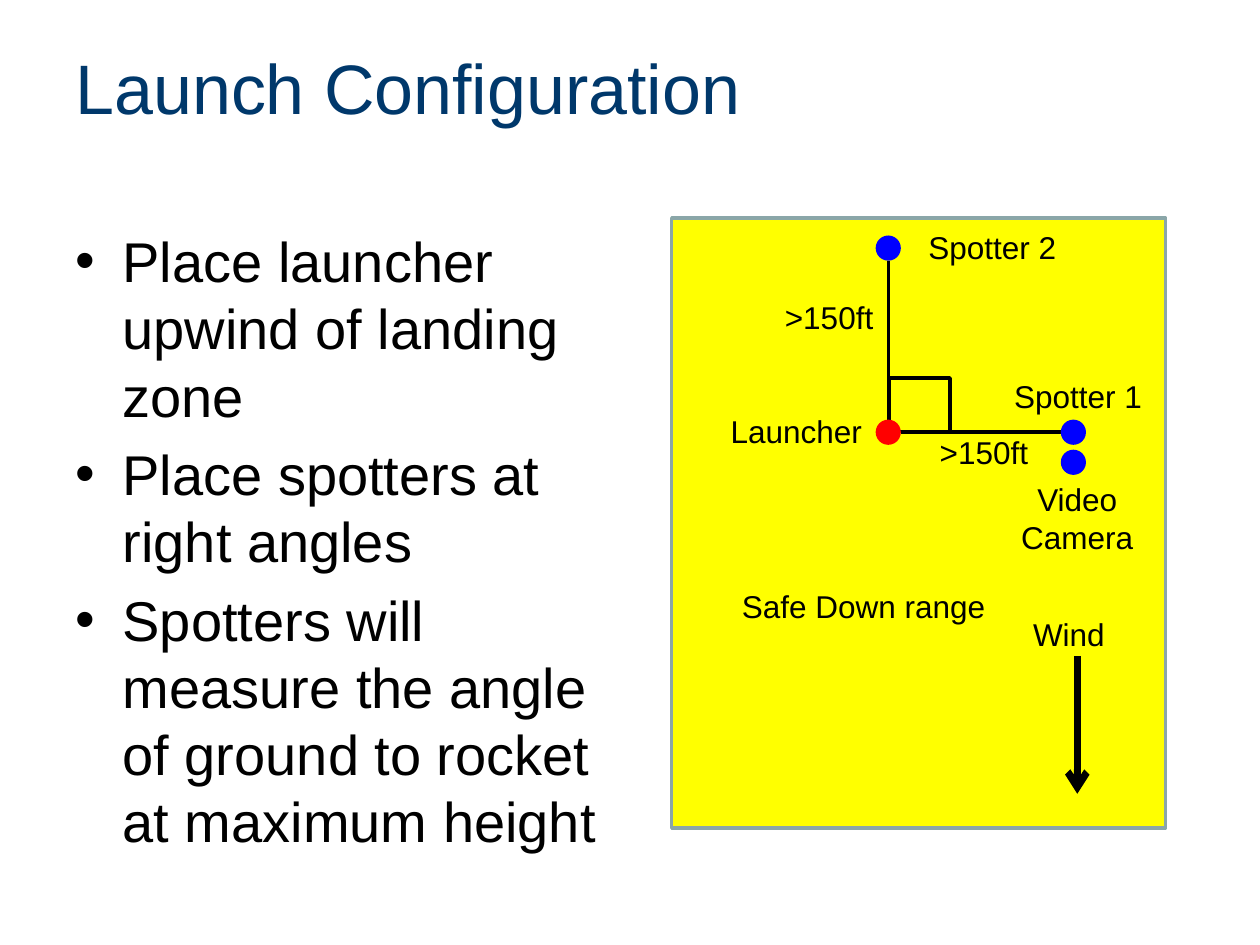
import pptx
import pptx.util
import pptx.dml.color
import pptx.enum.shapes
import pptx.enum.text
import pptx.oxml.ns
import lxml.etree

Pt = pptx.util.Pt
Color = pptx.dml.color.RGBColor.from_string
Shape = pptx.enum.shapes.MSO_SHAPE
Align = pptx.enum.text.PP_ALIGN
Anchor = pptx.enum.text.MSO_ANCHOR
qname = pptx.oxml.ns.qn

theme = {
    "font": "Arial",
    "title": 40, "body": 32, "label": 18,
    "navy": "00386B", "black": "000000", "field": "FFFF00",
    "border": "8AA6A8", "spotter": "0000FF", "launcher": "FF0000",
}

deck = pptx.Presentation()
deck.slide_width, deck.slide_height = Pt(720), Pt(540)
page = deck.slides.add_slide(deck.slide_layouts[6])


def add_text(text, left, top, width, height, size=theme["label"], color=theme["black"],
             wrap=False, anchor=Anchor.TOP, align=Align.LEFT, bullet=False):
    box = page.shapes.add_textbox(Pt(left), Pt(top), Pt(width), Pt(height))
    frame = box.text_frame
    frame.word_wrap = wrap
    frame.vertical_anchor = anchor
    frame.text = text
    for para in frame.paragraphs:
        para.alignment = align
        para.font.size = Pt(size)
        for span in para.runs:
            span.font.name = theme["font"]
            span.font.size = Pt(size)
            span.font.color.rgb = Color(color)
        if bullet:
            para.space_before = Pt(size * 0.2)
            properties = para._p.get_or_add_pPr()
            properties.set("marL", str(Pt(27)))
            properties.set("indent", str(-Pt(27)))
            lxml.etree.SubElement(properties, qname("a:buFont")).set("typeface", theme["font"])
            lxml.etree.SubElement(properties, qname("a:buChar")).set("char", "•")


def add_figure(kind, left, top, width, height, fill=None, line=None):
    figure = page.shapes.add_shape(kind, Pt(left), Pt(top), Pt(width), Pt(height))
    figure.shadow.inherit = False
    if fill:
        figure.fill.solid()
        figure.fill.fore_color.rgb = Color(fill)
    else:
        figure.fill.background()
    if line:
        figure.line.color.rgb = Color(line)
        figure.line.width = Pt(2)
    else:
        figure.line.fill.background()


add_text("Launch Configuration", 36, 21.6, 648, 56.2, size=theme["title"],
         color=theme["navy"], wrap=True, anchor=Anchor.MIDDLE)
add_text("Place launcher upwind of landing zone\n"
         "Place spotters at right angles\n"
         "Spotters will measure the angle of ground to rocket at maximum height",
         36, 126, 318.2, 356.4, size=theme["body"], wrap=True, bullet=True)

add_figure(Shape.RECTANGLE, 383.8, 124.6, 282.2, 348.5, theme["field"], theme["border"])
add_figure(Shape.RECTANGLE, 508.3, 216, 34.6, 30.6, line=theme["black"])

for start_x, start_y, end_x, end_y, weight in [
    (507.6, 149, 507.6, 239.8, 2),
    (606.2, 247, 514.8, 247, 2),
    (615.6, 375.1, 615.6, 453.6, 4),
]:
    line = page.shapes.add_connector(pptx.enum.shapes.MSO_CONNECTOR.STRAIGHT,
                                     Pt(start_x), Pt(start_y), Pt(end_x), Pt(end_y))
    line.line.color.rgb = Color(theme["black"])
    line.line.width = Pt(weight)
    lxml.etree.SubElement(line._element.spPr, qname("a:effectLst"))
wind_line = line.line._get_or_add_ln()
lxml.etree.SubElement(wind_line, qname("a:tailEnd")).set("type", "arrow")

for left, top, color in [
    (500.4, 134.6, theme["spotter"]),
    (606.2, 239.8, theme["spotter"]),
    (606.2, 257, theme["spotter"]),
    (500.4, 239.8, theme["launcher"]),
]:
    add_figure(Shape.OVAL, left, top, 14.4, 14.4, color)

for text, left, top, width in [
    ("Spotter 1", 572.4, 211.7, 88.6),
    ("Spotter 2", 523.4, 126.7, 88.6),
    ("Launcher", 410.4, 231.8, 90),
    ("Wind", 583.2, 347.8, 56.2),
    (">150ft", 529.9, 244.1, 65.5),
    (">150ft", 441.4, 167, 65.5),
    ("Safe Down range", 416.9, 331.9, 154.8),
]:
    add_text(text, left, top, width, 28.8)
add_text("Video\nCamera", 576, 270.7, 79.2, 51.1, align=Align.CENTER)

deck.save("out.pptx")
